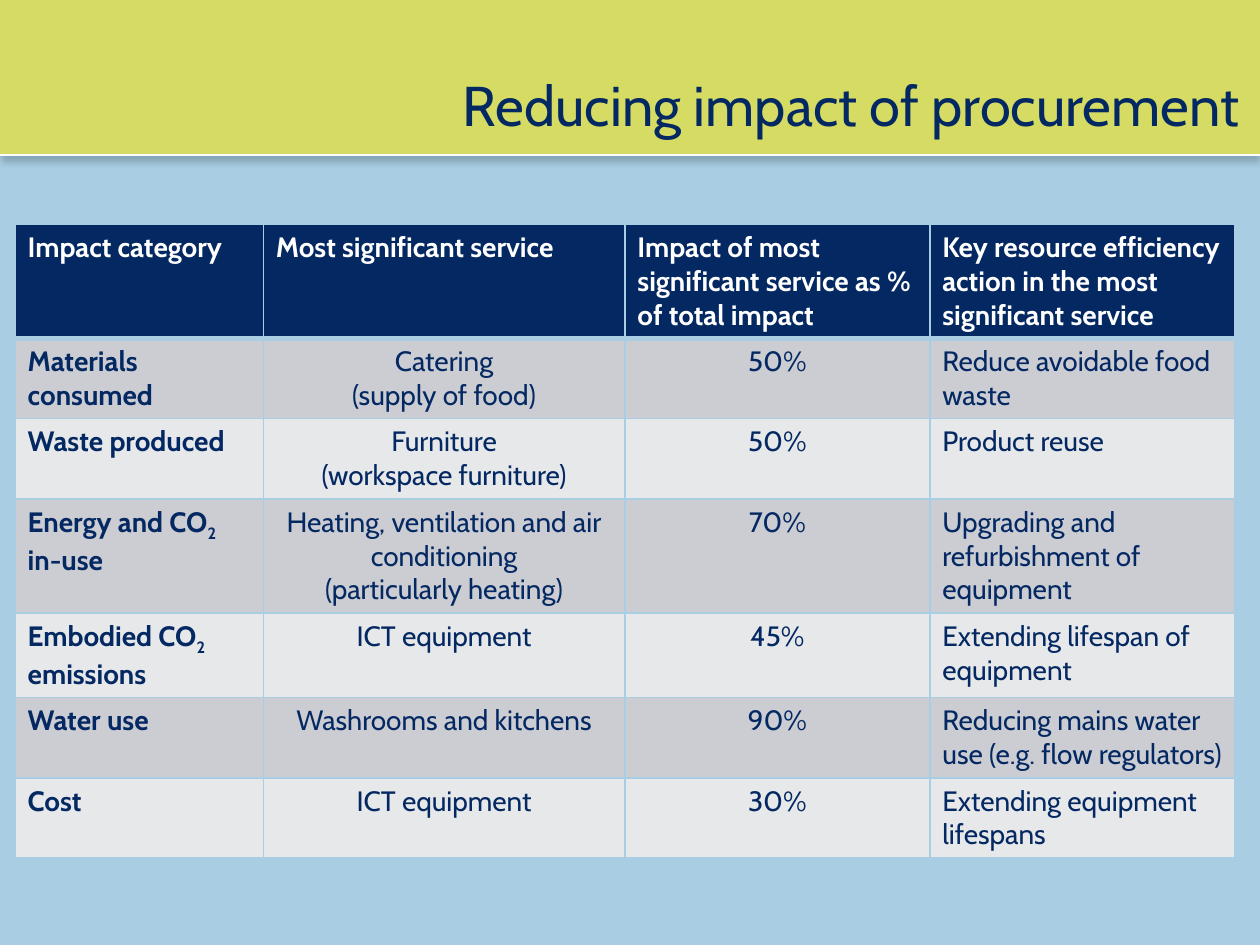
from lxml import etree
from pptx import Presentation
from pptx.dml.color import RGBColor
from pptx.enum.shapes import MSO_CONNECTOR, MSO_SHAPE
from pptx.enum.text import MSO_ANCHOR, PP_ALIGN
from pptx.oxml.ns import qn
from pptx.util import Inches, Pt

RECTANGLE = MSO_SHAPE.RECTANGLE
STRAIGHT = MSO_CONNECTOR.STRAIGHT
BOTTOM = MSO_ANCHOR.BOTTOM
LEFT, CENTER, RIGHT = PP_ALIGN.LEFT, PP_ALIGN.CENTER, PP_ALIGN.RIGHT

NAVY = RGBColor(0x04, 0x28, 0x62)
LIME = RGBColor(0xD6, 0xDC, 0x63)
SKY = RGBColor(0xA9, 0xCE, 0xE3)
WHITE = RGBColor(0xFF, 0xFF, 0xFF)
BLACK = RGBColor(0, 0, 0)
DARK_BAND = RGBColor(0xCC, 0xCD, 0xD3)
LIGHT_BAND = RGBColor(0xE7, 0xE8, 0xEA)

FONT = "Cabin"
SUBSCRIPT_TWO = "₂"
BANNER_HEIGHT = 1.23
COLUMN_WIDTHS = [1.97, 2.87, 2.42, 2.42]
ROW_HEIGHT = 0.41

HEADINGS = [
    "Impact category",
    "Most significant service",
    "Impact of most significant service as % of total impact",
    "Key resource efficiency action in the most significant service",
]
IMPACTS = [
    ["Materials consumed", "Catering\n(supply of food)", "50%",
     "Reduce avoidable food waste"],
    ["Waste produced", "Furniture\n(workspace furniture)", "50%",
     "Product reuse"],
    ["Energy and CO₂ in-use",
     "Heating, ventilation and air conditioning\n(particularly heating)",
     "70%", "Upgrading and refurbishment of equipment"],
    ["Embodied CO₂ emissions", "ICT equipment", "45%",
     "Extending lifespan of equipment"],
    ["Water use", "Washrooms and kitchens", "90%",
     "Reducing mains water use (e.g. flow regulators)"],
    ["Cost", "ICT equipment", "30%", "Extending equipment lifespans"],
]


def add_span(para, text, size, color, bold, baseline=0):
    span = para.add_run()
    span.text = text
    span.font.name = FONT
    span.font.size = Pt(size)
    span.font.bold = bold
    span.font.color.rgb = color
    if baseline:
        span.font._element.set("baseline", str(baseline * 1000))


def write_text(frame, text, size=16, color=NAVY, bold=False, align=LEFT):
    for index, line in enumerate(text.split("\n")):
        para = frame.add_paragraph() if index else frame.paragraphs[0]
        para.alignment = align
        before, mark, after = line.partition(SUBSCRIPT_TWO)
        add_span(para, before, size, color, bold)
        if mark:
            add_span(para, "2", size, color, bold, baseline=-25)
            add_span(para, after, size, color, bold)


def add_shadow(shape, color, opacity, blur, distance, angle):
    effects = etree.SubElement(shape._element.spPr, qn("a:effectLst"))
    shadow = etree.SubElement(
        effects, qn("a:outerShdw"), blurRad=str(Pt(blur)),
        dist=str(Pt(distance)), dir=str(angle * 60000), rotWithShape="0")
    tint = etree.SubElement(shadow, qn("a:srgbClr"), val=str(color))
    etree.SubElement(tint, qn("a:alpha"), val=str(opacity * 1000))


def add_banner(page, width):
    banner = page.shapes.add_shape(
        RECTANGLE, 0, 0, width, Inches(BANNER_HEIGHT))
    banner.fill.solid()
    banner.fill.fore_color.rgb = LIME
    banner.line.fill.background()
    add_shadow(banner, BLACK, opacity=20, blur=4, distance=3, angle=90)

    rule = page.shapes.add_connector(
        STRAIGHT, 0, Inches(BANNER_HEIGHT), width, Inches(BANNER_HEIGHT))
    rule.line.color.rgb = WHITE
    rule.line.width = Pt(1.5)
    etree.SubElement(rule._element.spPr, qn("a:effectLst"))


def add_title(page, text):
    box = page.shapes.add_textbox(
        Inches(0.91), Inches(0.51), Inches(8.93), Inches(0.58))
    frame = box.text_frame
    frame.word_wrap = True
    frame.vertical_anchor = BOTTOM
    frame.margin_left = frame.margin_right = 0
    frame.margin_top = frame.margin_bottom = 0
    write_text(frame, text, size=32, align=RIGHT)


def set_borders(cell, top, bottom):
    properties = cell._tc.get_or_add_tcPr()
    for side, width in zip("LRTB", (1, 1, top, bottom)):
        line = etree.SubElement(properties, qn(f"a:ln{side}"), w=str(Pt(width)))
        fill = etree.SubElement(line, qn("a:solidFill"))
        etree.SubElement(fill, qn("a:srgbClr"), val=str(SKY))


def fill_cell(cell, text, fill, top=1, bottom=1, **text_format):
    set_borders(cell, top, bottom)
    cell.fill.solid()
    cell.fill.fore_color.rgb = fill
    write_text(cell.text_frame, text, **text_format)


def add_impact_table(page):
    row_count = len(IMPACTS) + 1
    table = page.shapes.add_table(
        row_count, len(HEADINGS), Inches(0.12), Inches(1.78),
        Inches(sum(COLUMN_WIDTHS)), Inches(ROW_HEIGHT * row_count)).table
    for column, width in zip(table.columns, COLUMN_WIDTHS):
        column.width = Inches(width)
    for row in table.rows:
        row.height = Inches(ROW_HEIGHT)

    for column, heading in enumerate(HEADINGS):
        fill_cell(table.cell(0, column), heading, NAVY, bottom=3,
                  color=WHITE, bold=True)
    for row, impact in enumerate(IMPACTS, start=1):
        band = DARK_BAND if row % 2 else LIGHT_BAND
        for column, text in enumerate(impact):
            fill_cell(table.cell(row, column), text, band,
                      top=3 if row == 1 else 1, bold=column == 0,
                      align=CENTER if column in (1, 2) else LEFT)


def main():
    deck = Presentation()
    deck.slide_width, deck.slide_height = Inches(10), Inches(7.5)
    page = deck.slides.add_slide(deck.slide_layouts[6])
    page.background.fill.solid()
    page.background.fill.fore_color.rgb = SKY
    add_banner(page, deck.slide_width)
    add_impact_table(page)
    add_title(page, "Reducing impact of procurement")
    deck.save("out.pptx")


if __name__ == "__main__":
    main()
